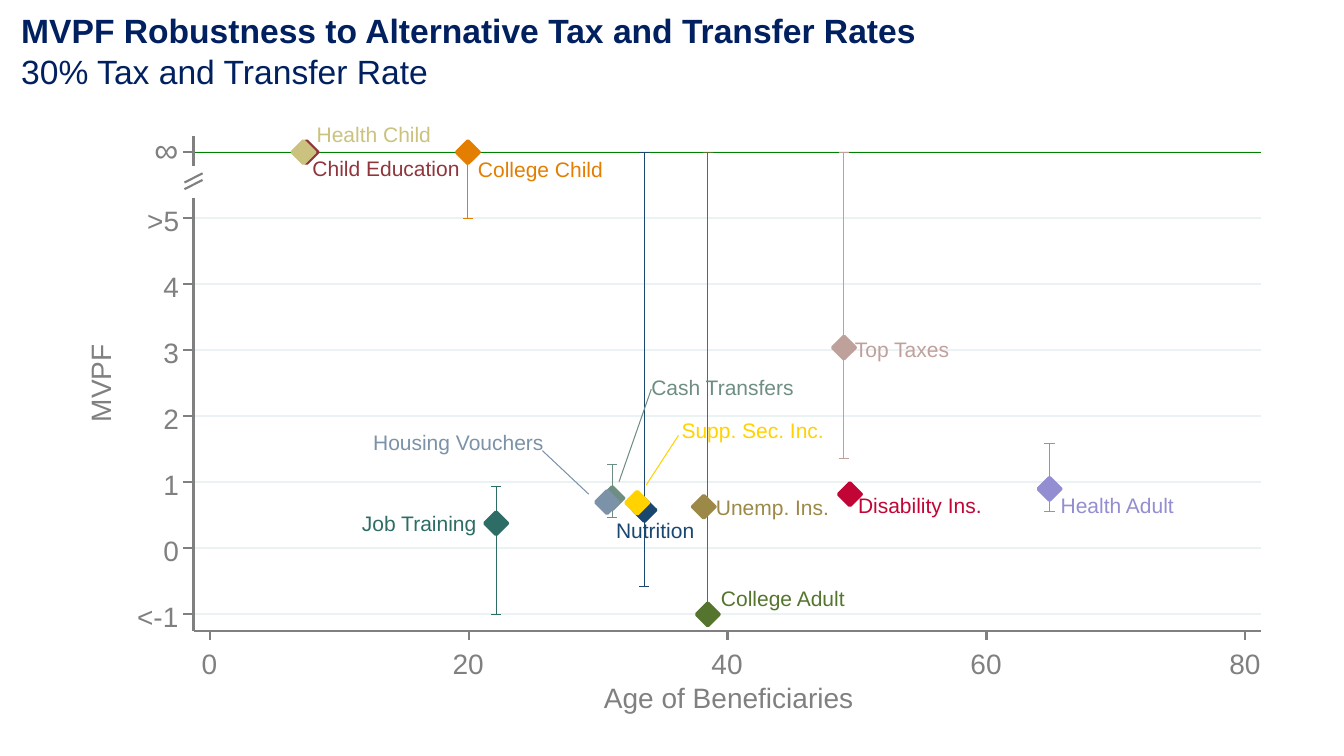
"""Build a slide that charts MVPF estimates with error bars by age of beneficiaries."""
from dataclasses import dataclass
from typing import Optional

import lxml.etree
import pptx
import pptx.dml.color
import pptx.enum.shapes
import pptx.enum.text
import pptx.oxml.ns
import pptx.util
from pptx.dml.color import RGBColor

SLIDE_WIDTH = pptx.util.Inches(13.33)
SLIDE_HEIGHT = pptx.util.Inches(7.5)
AGE_COLUMN = pptx.util.Inches(0.1284)
MVPF_ROW = pptx.util.Inches(0.655)
AGE_ZERO = pptx.util.Inches(2.08)
MVPF_ZERO = pptx.util.Inches(5.44)

AXIS_LEFT, AXIS_RIGHT = -1.25, 81.23
AXIS_BOTTOM, AXIS_TOP = -1.25, 6.24
BREAK_BOTTOM, BREAK_TOP = 5.31, 5.79
INFINITE = 6
CAP_HALF = 0.39
DIAMOND_HALF_AGE, DIAMOND_HALF_ROW = 0.87, 0.17

NAVY = RGBColor(0x00, 0x20, 0x60)
GRAY = RGBColor(0x80, 0x80, 0x80)
GRID = RGBColor(0xEA, 0xF2, 0xF3)
GREEN = RGBColor(0x00, 0x80, 0x00)
SAGE = RGBColor(0x6E, 0x8E, 0x84)
MAROON = RGBColor(0x90, 0x35, 0x3B)
FOREST = RGBColor(0x55, 0x75, 0x2F)
ORANGE = RGBColor(0xE3, 0x7E, 0x00)
CRIMSON = RGBColor(0xC1, 0x05, 0x34)
LAVENDER = RGBColor(0x93, 0x8D, 0xD2)
KHAKI = RGBColor(0xCA, 0xC2, 0x7E)
STEEL = RGBColor(0x7B, 0x92, 0xA8)
TEAL = RGBColor(0x2D, 0x6D, 0x66)
BLUE = RGBColor(0x1A, 0x47, 0x6F)
YELLOW = RGBColor(0xFF, 0xD2, 0x00)
ROSE = RGBColor(0xBF, 0xA1, 0x9C)
BRONZE = RGBColor(0x9C, 0x88, 0x47)

Point = tuple[float, float]


@dataclass(frozen=True)
class Label:
    """Text placed by age column and MVPF row."""
    text: str
    age: float
    row: float
    columns: float
    rows: float = 0.6
    size: int = 20
    color: RGBColor = GRAY
    rotation: int = 0


@dataclass(frozen=True)
class Program:
    """One policy category: its estimate, interval, name position and leader."""
    name: str
    color: RGBColor
    age: float
    mvpf: float
    low: float
    high: float
    name_at: Point
    name_columns: float
    leader: Optional[tuple[Point, Point]] = None


PROGRAMS = [
    Program("Cash Transfers", SAGE, 31.1, 0.76, 0.47, 1.27, (34.11, 2.64), 12.38,
            ((31.62, 1.01), (34.11, 2.41))),
    Program("Child Education", MAROON, 7.48, INFINITE, INFINITE, INFINITE, (7.94, 5.95), 12.62),
    Program("College Adult", FOREST, 38.47, -1, -1, INFINITE, (39.49, -0.56), 10.9),
    Program("College Child", ORANGE, 19.94, INFINITE, 5, INFINITE, (20.72, 5.94), 10.9),
    Program("Disability Ins.", CRIMSON, 49.45, 0.82, 0.81, 0.87, (50.08, 0.84), 10.83),
    Program("Health Adult", LAVENDER, 64.87, 0.9, 0.56, 1.59, (65.73, 0.84), 9.97),
    Program("Health Child", KHAKI, 7.24, INFINITE, INFINITE, INFINITE, (8.26, 6.47), 9.97),
    Program("Housing Vouchers", STEEL, 30.69, 0.7, 0.67, 0.76, (12.62, 1.8), 14.64,
            ((25.7, 1.48), (29.28, 0.82))),
    Program("Job Training", TEAL, 22.12, 0.38, -1, 0.93, (11.76, 0.58), 10.12),
    Program("Nutrition", BLUE, 33.57, 0.58, -0.58, INFINITE, (31.39, 0.46), 7.09),
    Program("Supp. Sec. Inc.", YELLOW, 33.02, 0.69, 0.58, 0.82, (36.45, 1.98), 12.23,
            ((33.72, 0.96), (36.21, 1.71))),
    Program("Top Taxes", ROSE, 48.99, 3.04, 1.36, INFINITE, (49.84, 3.21), 8.72),
    Program("Unemp. Ins.", BRONZE, 38.16, 0.63, 0.53, 0.75, (39.1, 0.82), 9.97),
]
MVPF_TICKS = {-1: "<-1", 0: "0", 1: "1", 2: "2", 3: "3", 4: "4", 5: ">5"}
TICK_COLUMNS = {1: 2.18, 2: 3.43, 3: 4.21}
AXIS_NAMES = [
    Label("MVPF", -11.76, 2.9, 7.01, rotation=270),
    Label("Age of Beneficiaries", 30.45, -2, 20.4),
    Label("∞", -4.28, 6.35, 1.87, 0.61, 24),
]


def at_age(age: float) -> int:
    """Return the horizontal position of an age."""
    return round(AGE_ZERO + age * AGE_COLUMN)


def at_row(row: float) -> int:
    """Return the vertical position of an MVPF value."""
    return round(MVPF_ZERO - row * MVPF_ROW)


def draw_line(slide, start: Point, end: Point, color: RGBColor, points: float = 0.75) -> None:
    """Draw a straight line between two chart points."""
    line = slide.shapes.add_connector(
        pptx.enum.shapes.MSO_CONNECTOR.STRAIGHT,
        at_age(start[0]), at_row(start[1]), at_age(end[0]), at_row(end[1]))
    line.line.color.rgb = color
    line.line.width = pptx.util.Pt(points)
    lxml.etree.SubElement(line._element.spPr, pptx.oxml.ns.qn("a:effectLst"))


def add_run(paragraph, text: str, size: int, color: RGBColor, bold: bool = False) -> None:
    """Add one styled run to a paragraph."""
    run = paragraph.add_run()
    run.text = text
    run.font.name = "Arial"
    run.font.size = pptx.util.Pt(size)
    run.font.bold = bold
    run.font.color.rgb = color


def add_frame(slide, age: float, row: float, columns: float, rows: float, wrap: bool = False):
    """Add an empty text box without margins."""
    box = slide.shapes.add_textbox(
        at_age(age), at_row(row), round(columns * AGE_COLUMN), round(rows * MVPF_ROW))
    frame = box.text_frame
    frame.margin_left = frame.margin_right = frame.margin_top = frame.margin_bottom = 0
    frame.word_wrap = wrap
    frame.auto_size = pptx.enum.text.MSO_AUTO_SIZE.SHAPE_TO_FIT_TEXT
    return box


def draw_label(slide, label: Label) -> None:
    """Draw a one-line label."""
    box = add_frame(slide, label.age, label.row, label.columns, label.rows)
    box.rotation = label.rotation
    add_run(box.text_frame.paragraphs[0], label.text, label.size, label.color)


def draw_title(slide) -> None:
    """Draw the bold title and the plain subtitle."""
    frame = add_frame(slide, -14.56, 8.15, 90.5, 1.24, wrap=True).text_frame
    add_run(frame.paragraphs[0], "MVPF Robustness to Alternative Tax and Transfer Rates",
            24, NAVY, bold=True)
    add_run(frame.add_paragraph(), "30% Tax and Transfer Rate", 24, NAVY)


def draw_interval(slide, program: Program) -> None:
    """Draw the error bar and its caps."""
    if program.low < program.high:
        draw_line(slide, (program.age, program.low), (program.age, program.high), program.color)
    for bound in sorted({program.low, program.high}):
        draw_line(slide, (program.age - CAP_HALF, bound), (program.age + CAP_HALF, bound),
                  program.color)


def draw_estimate(slide, program: Program) -> None:
    """Draw the diamond of the point estimate."""
    diamond = slide.shapes.add_shape(
        pptx.enum.shapes.MSO_SHAPE.DIAMOND,
        at_age(program.age - DIAMOND_HALF_AGE), at_row(program.mvpf + DIAMOND_HALF_ROW),
        round(2 * DIAMOND_HALF_AGE * AGE_COLUMN), round(2 * DIAMOND_HALF_ROW * MVPF_ROW))
    diamond.shadow.inherit = False
    diamond.fill.solid()
    diamond.fill.fore_color.rgb = program.color
    diamond.line.color.rgb = program.color
    diamond.line.width = pptx.util.Pt(2.5)


def draw_axes(slide) -> None:
    """Draw both axes, their ticks and the break below infinity."""
    for bottom, top in ((AXIS_BOTTOM, BREAK_BOTTOM), (BREAK_TOP, AXIS_TOP)):
        draw_line(slide, (AXIS_LEFT, bottom), (AXIS_LEFT, top), GRAY, 1.5)
    for row in (5.44, 5.54):
        draw_line(slide, (-1.95, row), (-0.55, row + 0.14), GRAY, 1.5)
    draw_line(slide, (AXIS_LEFT, AXIS_BOTTOM), (AXIS_RIGHT, AXIS_BOTTOM), GRAY, 1.5)
    for row in (*MVPF_TICKS, INFINITE):
        draw_line(slide, (AXIS_LEFT, row), (-2.1, row), GRAY, 1.5)
    for row, text in MVPF_TICKS.items():
        columns = TICK_COLUMNS[len(text)]
        draw_label(slide, Label(text, -1.4 - columns, row + 0.23, columns))
    for age in range(0, 81, 20):
        text = str(age)
        draw_line(slide, (age, AXIS_BOTTOM), (age, -1.39), GRAY, 1.5)
        draw_label(slide, Label(text, age - 0.62 * len(text), -1.48, TICK_COLUMNS[len(text)]))
    for name in AXIS_NAMES:
        draw_label(slide, name)


def main() -> None:
    """Build and save the presentation."""
    deck = pptx.Presentation()
    deck.slide_width, deck.slide_height = SLIDE_WIDTH, SLIDE_HEIGHT
    slide = deck.slides.add_slide(deck.slide_layouts[6])
    for row in (*MVPF_TICKS, INFINITE):
        draw_line(slide, (AXIS_LEFT, row), (AXIS_RIGHT, row), GRID, 1.5)
    draw_line(slide, (AXIS_LEFT, INFINITE), (AXIS_RIGHT, INFINITE), GREEN)
    for draw in (draw_interval, draw_estimate):
        for program in PROGRAMS:
            draw(slide, program)
    draw_axes(slide)
    draw_title(slide)
    for program in PROGRAMS:
        draw_label(slide, Label(program.name, *program.name_at, program.name_columns,
                                0.46, 15, program.color))
        if program.leader:
            draw_line(slide, *program.leader, program.color)
    deck.save("out.pptx")


if __name__ == "__main__":
    main()
